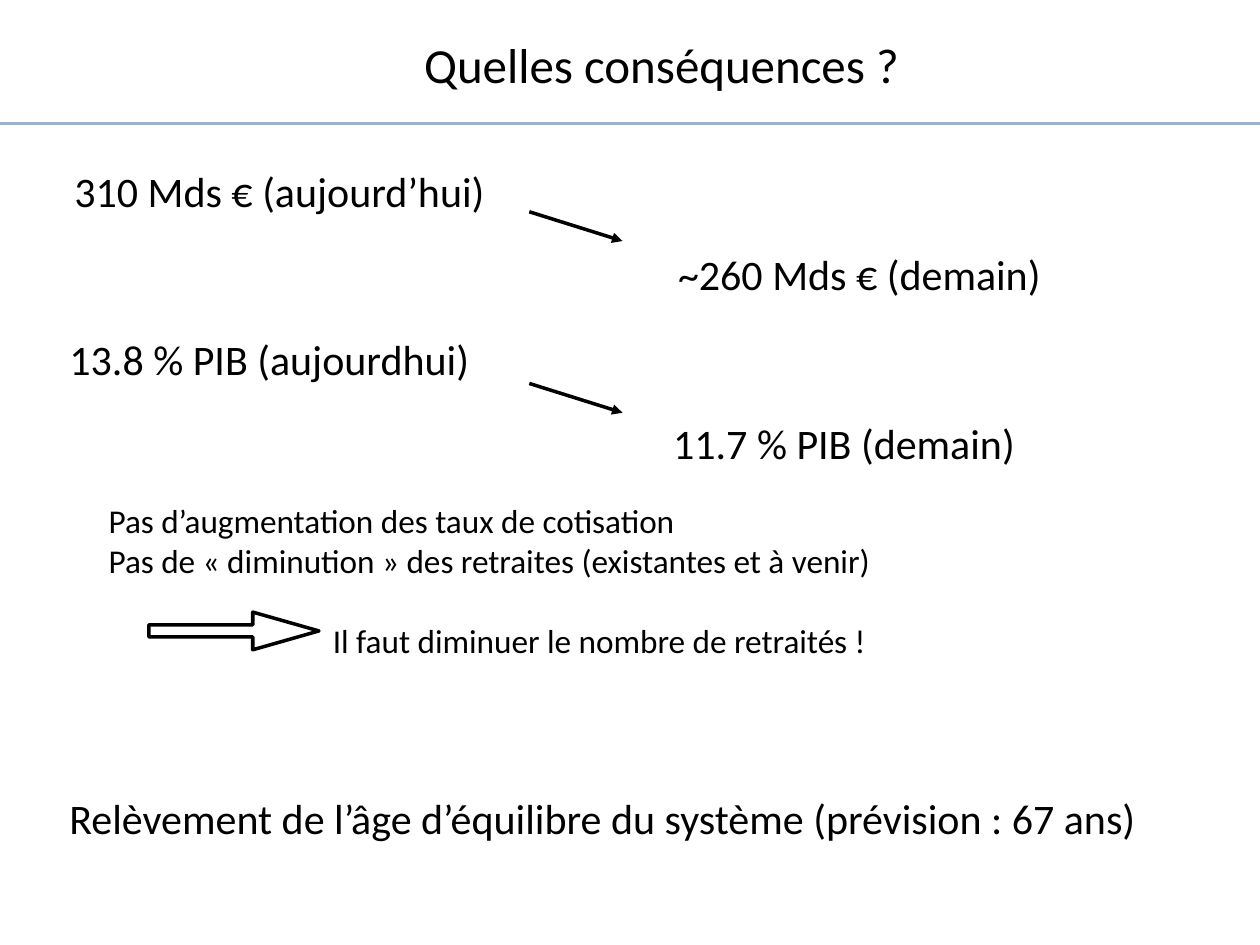
import pptx
import pptx.dml.color
import pptx.enum.shapes
import pptx.enum.text
import pptx.oxml.ns
import pptx.util
from lxml import etree

Cm = pptx.util.Cm
Pt = pptx.util.Pt
qn = pptx.oxml.ns.qn
ALIGN = pptx.enum.text.PP_ALIGN

COLOURS = {"text": "000000", "rule": "95B3D7", "arrow": "000000"}
FONT = "Calibri"
FRAME_FORMAT = {
    "word_wrap": True,
    "auto_size": pptx.enum.text.MSO_AUTO_SIZE.SHAPE_TO_FIT_TEXT,
    "margin_left": Cm(0.13),
    "margin_right": Cm(0.13),
    "margin_top": Cm(0.13),
    "margin_bottom": Cm(0.13),
}


def apply_format(target, values):
    for name, value in values.items():
        setattr(target, name, value)


def colour(name):
    return pptx.dml.color.RGBColor.from_string(COLOURS[name])


def style_line(line, name):
    line.color.rgb = colour(name)
    line.width = Pt(2)


def add_text(page, place, lines, size, align=ALIGN.LEFT):
    box = page.shapes.add_textbox(*map(Cm, place))
    frame = box.text_frame
    apply_format(frame, FRAME_FORMAT)
    for index, line in enumerate(lines):
        para = frame.add_paragraph() if index else frame.paragraphs[0]
        para.alignment = align
        span = para.add_run()
        span.text = line
        apply_format(span.font, {"name": FONT, "size": Pt(size)})
        span.font.color.rgb = colour("text")
    return box


def add_line(page, start, end, name, arrowhead=False):
    connector = page.shapes.add_connector(
        pptx.enum.shapes.MSO_CONNECTOR.STRAIGHT, *map(Cm, start + end))
    style_line(connector.line, name)
    if arrowhead:
        etree.SubElement(connector.line._get_or_add_ln(), qn("a:tailEnd"), type="triangle")
    etree.SubElement(connector._element.spPr, qn("a:effectLst"))


def add_block_arrow(page, place):
    arrow = page.shapes.add_shape(
        pptx.enum.shapes.MSO_SHAPE.RIGHT_ARROW, *map(Cm, place))
    arrow.shadow.inherit = False
    arrow.fill.background()
    style_line(arrow.line, "arrow")
    arrow.adjustments[0] = 0.32
    arrow.adjustments[1] = 1.755


def main():
    deck = pptx.Presentation()
    apply_format(deck, {"slide_width": Cm(25.4), "slide_height": Cm(19.05)})
    page = deck.slides.add_slide(deck.slide_layouts[6])

    # Title and rule
    add_text(page, (2.92, 0.56, 20.83, 1.37), ["Quelles conséquences ?"], 28, ALIGN.CENTER)
    add_line(page, (25.4, 2.49), (0, 2.49), "rule")

    # Today and tomorrow, stepping down the page
    comparisons = [
        (1.37, "310 Mds € (aujourd’hui)", "~260 Mds € (demain)"),
        (1.27, "13.8 % PIB (aujourdhui)", "11.7 % PIB (demain)"),
    ]
    for index, (left, today, tomorrow) in enumerate(comparisons):
        top = 3.2 + index * 3.39
        add_text(page, (left, top, 22.63, 1.24), [today], 24)
        add_text(page, (left + 12.17, top + 1.69, 10.69, 1.24), [tomorrow], 24)
        arrow_top = 4.27 + index * 3.46
        add_line(page, (10.67, arrow_top), (12.55, arrow_top + 0.59), "arrow", True)

    # Constraints and what follows from them
    reasons = add_text(page, (2.06, 9.96, 16.69, 3.51), [
        "Pas d’augmentation des taux de cotisation",
        "Pas de « diminution » des retraites (existantes et à venir)",
        "Il faut diminuer le nombre de retraités !",
    ], 19)
    outcome = reasons.text_frame.paragraphs[-1]
    outcome.space_before = Pt(23)
    outcome._p.get_or_add_pPr().set("marL", str(Cm(4.52)))
    add_block_arrow(page, (3, 12.34, 3.43, 0.76))

    # Conclusion
    add_text(page, (1.27, 15.85, 22.63, 1.24),
             ["Relèvement de l’âge d’équilibre du système (prévision : 67 ans)"], 24)

    deck.save("out.pptx")


if __name__ == "__main__":
    main()
